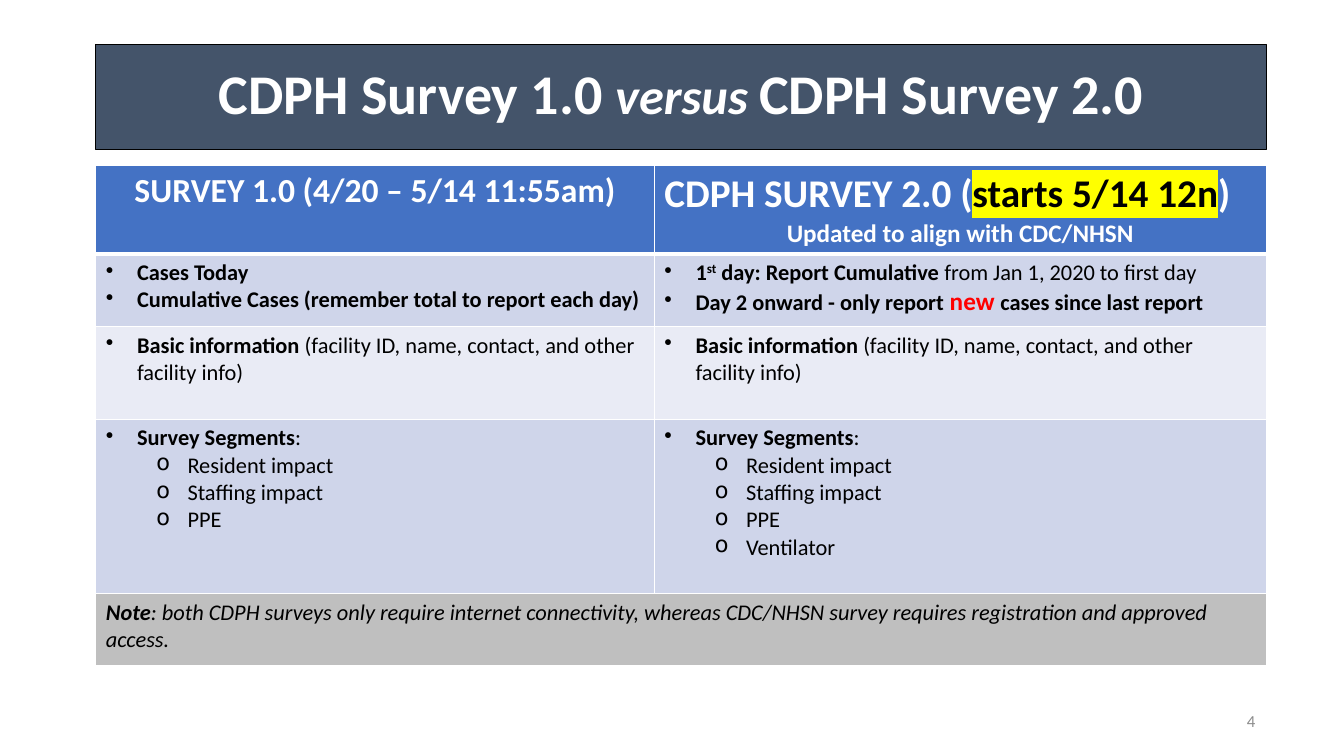
from lxml.etree import SubElement
from pptx import Presentation
from pptx.dml.color import RGBColor
from pptx.enum.shapes import MSO_SHAPE
from pptx.enum.text import MSO_ANCHOR, PP_ALIGN
from pptx.oxml.ns import qn
from pptx.util import Inches, Pt

COLORS = {
    "white": "FFFFFF", "black": "000000", "slate": "44546A", "header": "4472C4",
    "band": "CFD5EA", "light band": "E9EBF5", "note": "BFBFBF",
    "highlight": "FFFF00", "red": "FF0000", "page": "8C8C8C",
}
FONT = "Calibri"
LEFT, WIDTH = 0.95, 11.61
COLUMN_WIDTHS = [5.54, 6.07]
ROW_HEIGHTS = [0.86, 0.72, 0.92, 1.73, 0.71]
BULLETS = {"•": 0.31, "o": 0.81}
HANGING = 0.31
BOLD = {"bold": True}

BASIC_INFORMATION = [
    ("•", [("Basic information ", BOLD),
           ("(facility ID, name, contact, and other facility info)", {})]),
]


def survey_segments(*segments):
    heading = ("•", [("Survey Segments", BOLD), (":", {})])
    return [heading] + [("o", [(segment, {})]) for segment in segments]


BODY_ROWS = [
    ("band", [
        [("•", [("Cases Today", BOLD)]),
         ("•", [("Cumulative Cases (remember total to report each day)", BOLD)])],
        [("•", [("1", BOLD), ("st", {"bold": True, "superscript": True}),
                (" day: Report Cumulative", BOLD),
                (" from Jan 1, 2020 to first day", {})]),
         ("•", [("Day 2 onward - only report", BOLD),
                (" new ", {"bold": True, "size": 18, "color": "red"}),
                ("cases since last report", BOLD)])],
    ]),
    ("light band", [BASIC_INFORMATION, BASIC_INFORMATION]),
    ("band", [
        survey_segments("Resident impact", "Staffing impact", "PPE"),
        survey_segments("Resident impact", "Staffing impact", "PPE", "Ventilator"),
    ]),
]


def rgb(color):
    return RGBColor.from_string(COLORS[color])


def fill_solid(target, color):
    target.fill.solid()
    target.fill.fore_color.rgb = rgb(color)


def add_run(paragraph, text, bold=None, italic=None, size=None, color=None,
            highlight=None, superscript=False):
    run = paragraph.add_run()
    run.text = text
    run.font.bold = bold
    run.font.italic = italic
    if size:
        run.font.size = Pt(size)
    if color:
        run.font.color.rgb = rgb(color)
    properties = run.font._element
    if highlight:
        mark = SubElement(properties, qn("a:highlight"))
        SubElement(mark, qn("a:srgbClr"), val=COLORS[highlight])
    if superscript:
        properties.set("baseline", "30000")


def write_paragraph(paragraph, runs, size, color, align=PP_ALIGN.LEFT, bullet=None,
                    bold=False, italic=False):
    """Set the shared font on the paragraph and only the differences on runs."""
    paragraph.alignment = align
    if bullet:
        properties = paragraph._p.get_or_add_pPr()
        properties.set("marL", str(Inches(BULLETS[bullet])))
        properties.set("indent", str(-Inches(HANGING)))
        SubElement(properties, qn("a:buChar"), char=bullet)
        paragraph.level = list(BULLETS).index(bullet)
    font = paragraph.font
    font.name, font.size, font.bold, font.italic = FONT, Pt(size), bold, italic
    font.color.rgb = rgb(color)
    for text, style in runs:
        add_run(paragraph, text, **style)


def set_borders(cell, bottom):
    properties = cell._tc.get_or_add_tcPr()
    for side, points in (("L", 1), ("R", 1), ("T", 1), ("B", bottom)):
        line = SubElement(properties, qn(f"a:ln{side}"), w=str(Pt(points)))
        fill = SubElement(line, qn("a:solidFill"))
        SubElement(fill, qn("a:srgbClr"), val=COLORS["white"])


def format_cell(cell, color, bottom=1):
    set_borders(cell, bottom)
    fill_solid(cell, color)


def fill_bullets(cell, items):
    frame = cell.text_frame
    for index, (bullet, runs) in enumerate(items):
        paragraph = frame.add_paragraph() if index else frame.paragraphs[0]
        write_paragraph(paragraph, runs, 16, "black", bullet=bullet)


def add_title(slide):
    banner = slide.shapes.add_shape(
        MSO_SHAPE.RECTANGLE, Inches(LEFT), Inches(0.44), Inches(WIDTH), Inches(1.04))
    banner.shadow.inherit = False
    fill_solid(banner, "slate")
    banner.line.color.rgb = rgb("black")
    banner.line.width = Pt(0.75)
    frame = banner.text_frame
    frame.word_wrap = True
    frame.vertical_anchor = MSO_ANCHOR.MIDDLE
    title = frame.paragraphs[0]
    title.line_spacing = 0.9
    write_paragraph(title, [("CDPH Survey 1.0 ", {}),
                            ("versus ", {"size": 36, "italic": True}),
                            ("CDPH Survey 2.0", {})],
                    40, "white", PP_ALIGN.CENTER, bold=True)


def fill_header(first, second):
    for cell in (first, second):
        format_cell(cell, "header", bottom=3)
    write_paragraph(first.text_frame.paragraphs[0],
                    [("SURVEY 1.0 (4/20 – 5/14 11:55am)", {})],
                    24, "white", PP_ALIGN.CENTER, bold=True)
    write_paragraph(second.text_frame.paragraphs[0],
                    [("CDPH SURVEY 2.0 (", {}),
                     ("starts 5/14 12n", {"color": "black", "highlight": "highlight"}),
                     (")", {})], 28, "white", bold=True)
    write_paragraph(second.text_frame.add_paragraph(),
                    [("Updated to align with CDC/NHSN", {})],
                    18, "white", PP_ALIGN.CENTER, bold=True)


def add_comparison(slide):
    table = slide.shapes.add_table(
        len(ROW_HEIGHTS), len(COLUMN_WIDTHS), Inches(LEFT), Inches(1.64),
        Inches(WIDTH), Inches(sum(ROW_HEIGHTS))).table
    for column, width in zip(table.columns, COLUMN_WIDTHS):
        column.width = Inches(width)
    for row, height in zip(table.rows, ROW_HEIGHTS):
        row.height = Inches(height)
    fill_header(table.cell(0, 0), table.cell(0, 1))
    for row, (color, contents) in enumerate(BODY_ROWS, start=1):
        for column, items in enumerate(contents):
            cell = table.cell(row, column)
            format_cell(cell, color)
            fill_bullets(cell, items)
    last = len(ROW_HEIGHTS) - 1
    note = table.cell(last, 0)
    note.merge(table.cell(last, 1))
    format_cell(note, "note")
    write_paragraph(note.text_frame.paragraphs[0],
                    [("Note", BOLD),
                     (": both CDPH surveys only require internet connectivity, whereas "
                      "CDC/NHSN survey requires registration and approved access.", {})],
                    16, "black", italic=True)


def add_page_number(slide):
    frame = slide.shapes.add_textbox(
        Inches(9.55), Inches(6.95), Inches(3), Inches(0.4)).text_frame
    frame.word_wrap = True
    frame.vertical_anchor = MSO_ANCHOR.MIDDLE
    write_paragraph(frame.paragraphs[0], [("4", {})], 12, "page", PP_ALIGN.RIGHT)


def main():
    deck = Presentation()
    deck.slide_width, deck.slide_height = Inches(13.33), Inches(7.5)
    slide = deck.slides.add_slide(deck.slide_layouts[6])
    add_comparison(slide)
    add_page_number(slide)
    add_title(slide)
    deck.save("out.pptx")


if __name__ == "__main__":
    main()
